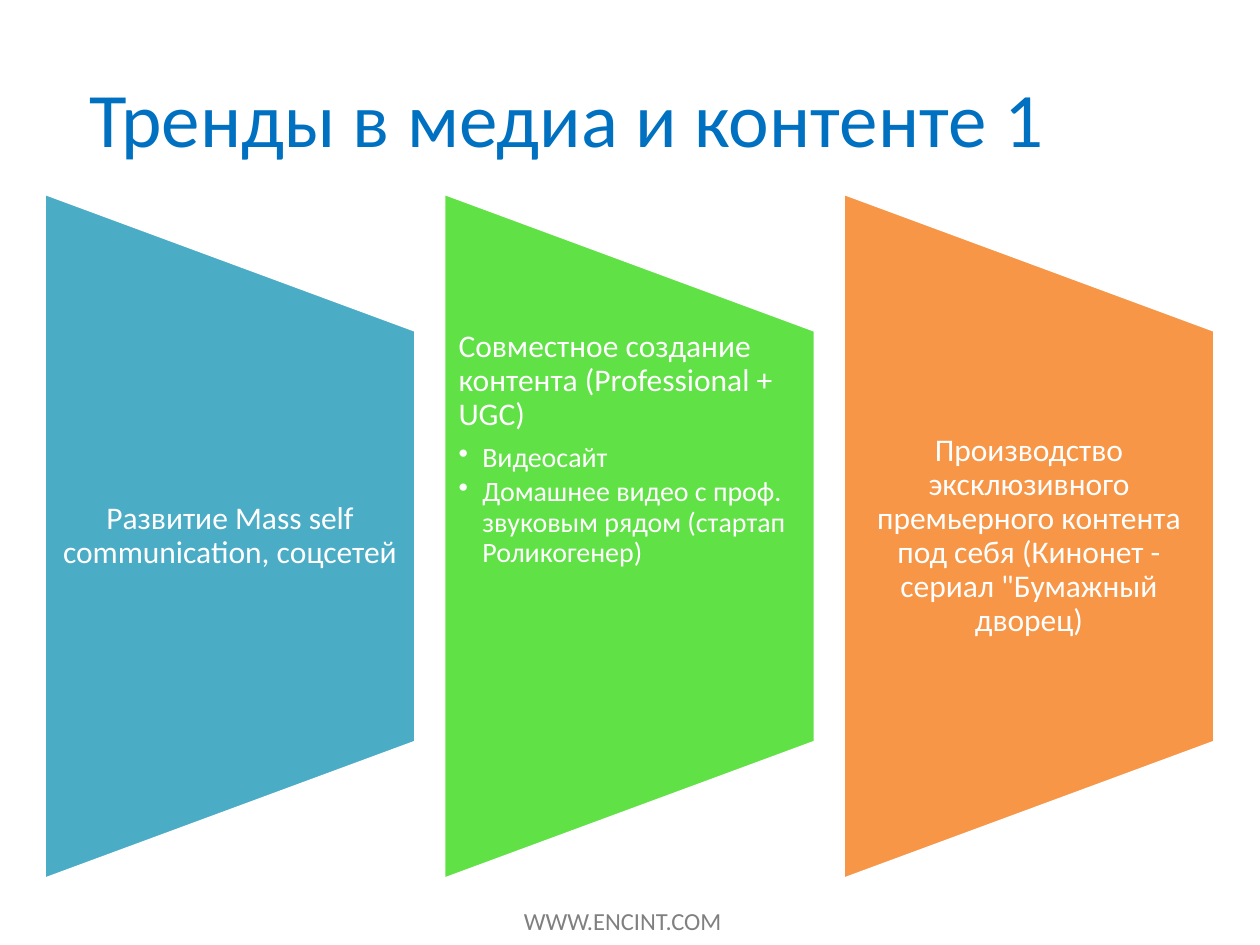
from lxml import etree
from pptx import Presentation
from pptx import util as u
from pptx.dml import color
from pptx.enum import shapes, text
from pptx.oxml import ns

FONT = "Calibri"
WHITE = "FFFFFF"
CENTER = text.PP_ALIGN.CENTER
LEFT = text.PP_ALIGN.LEFT

PANELS = [
    ("4BACC6", "Развитие Mass self communication, соцсетей", []),
    ("60E146", "Совместное создание контента (Professional + UGC)",
     ["Видеосайт",
      "Домашнее видео с проф. звуковым рядом (стартап Роликогенер)"]),
    ("F79646",
     "Производство эксклюзивного премьерного контента под себя "
     "(Кинонет - сериал \"Бумажный дворец)", []),
]


def rgb(value):
    return color.RGBColor.from_string(value)


def add_text_frame(slide, box, anchor, margin=(0.25, 0.13), wrap=True):
    frame = slide.shapes.add_textbox(*(u.Cm(length) for length in box)).text_frame
    frame.word_wrap = wrap
    frame.vertical_anchor = anchor
    frame.margin_left = frame.margin_right = u.Cm(margin[0])
    frame.margin_top = frame.margin_bottom = u.Cm(margin[1])
    return frame


def add_run(paragraph, words, size, value):
    run = paragraph.add_run()
    run.text = words
    run.font.name = FONT
    run.font.size = u.Pt(size)
    run.font.color.rgb = rgb(value)


def add_bullet(paragraph):
    paragraph.level = 1
    properties = paragraph._p.get_or_add_pPr()
    properties.set("marL", str(u.Cm(0.48)))
    properties.set("indent", str(-u.Cm(0.48)))
    bullet = etree.SubElement(properties, ns.qn("a:buChar"))
    bullet.set("char", "•")


def add_title(slide, box):
    paragraph = add_text_frame(slide, box, text.MSO_ANCHOR.MIDDLE).paragraphs[0]
    paragraph.alignment = CENTER
    add_run(paragraph, "Тренды в медиа и контенте 1", 44, "0070C0")


def add_footer(slide, box):
    frame = add_text_frame(slide, box, text.MSO_ANCHOR.TOP, wrap=False)
    add_run(frame.paragraphs[0], "WWW.ENCINT.COM", 14, "808080")


def add_panel(slide, box, fill, heading, points):
    left, top, width, height = box
    shape = slide.shapes.add_shape(
        shapes.MSO_SHAPE.FLOWCHART_MANUAL_OPERATION,
        u.Cm(left + (width - height) / 2), u.Cm(top + (height - width) / 2),
        u.Cm(height), u.Cm(width))
    shape.rotation = 270
    shape.shadow.inherit = False
    shape.fill.solid()
    shape.fill.fore_color.rgb = rgb(fill)
    shape.line.color.rgb = rgb(WHITE)
    shape.line.width = u.Pt(2)

    anchor = text.MSO_ANCHOR.TOP if points else text.MSO_ANCHOR.MIDDLE
    text_box = (left, top + height * 0.2, width, height * 0.6)
    frame = add_text_frame(slide, text_box, anchor, (0.3, 0))
    paragraph = frame.paragraphs[0]
    paragraph.alignment = LEFT if points else CENTER
    paragraph.line_spacing = 0.9
    paragraph.space_after = u.Pt(6.3)
    add_run(paragraph, heading, 18, WHITE)
    for point in points:
        paragraph = frame.add_paragraph()
        paragraph.line_spacing = 0.9
        paragraph.space_after = u.Pt(2.4)
        add_bullet(paragraph)
        add_run(paragraph, point, 16, WHITE)


def add_panels(slide, box, gap):
    left, top, width, height = box
    panel_width = (width - gap * (len(PANELS) - 1)) / len(PANELS)
    for index, panel in enumerate(PANELS):
        panel_left = left + index * (panel_width + gap)
        add_panel(slide, (panel_left, top, panel_width, height), *panel)


def main():
    presentation = Presentation()
    presentation.slide_width = u.Cm(25.4)
    presentation.slide_height = u.Cm(19.05)
    slide = presentation.slides.add_slide(presentation.slide_layouts[6])
    add_footer(slide, (10.31, 18.14, 4.52, 0.86))
    add_title(slide, (0, 0.76, 22.86, 3.18))
    add_panels(slide, (0.89, 3.89, 23.6, 13.84), 0.56)
    presentation.save("out.pptx")


if __name__ == "__main__":
    main()
